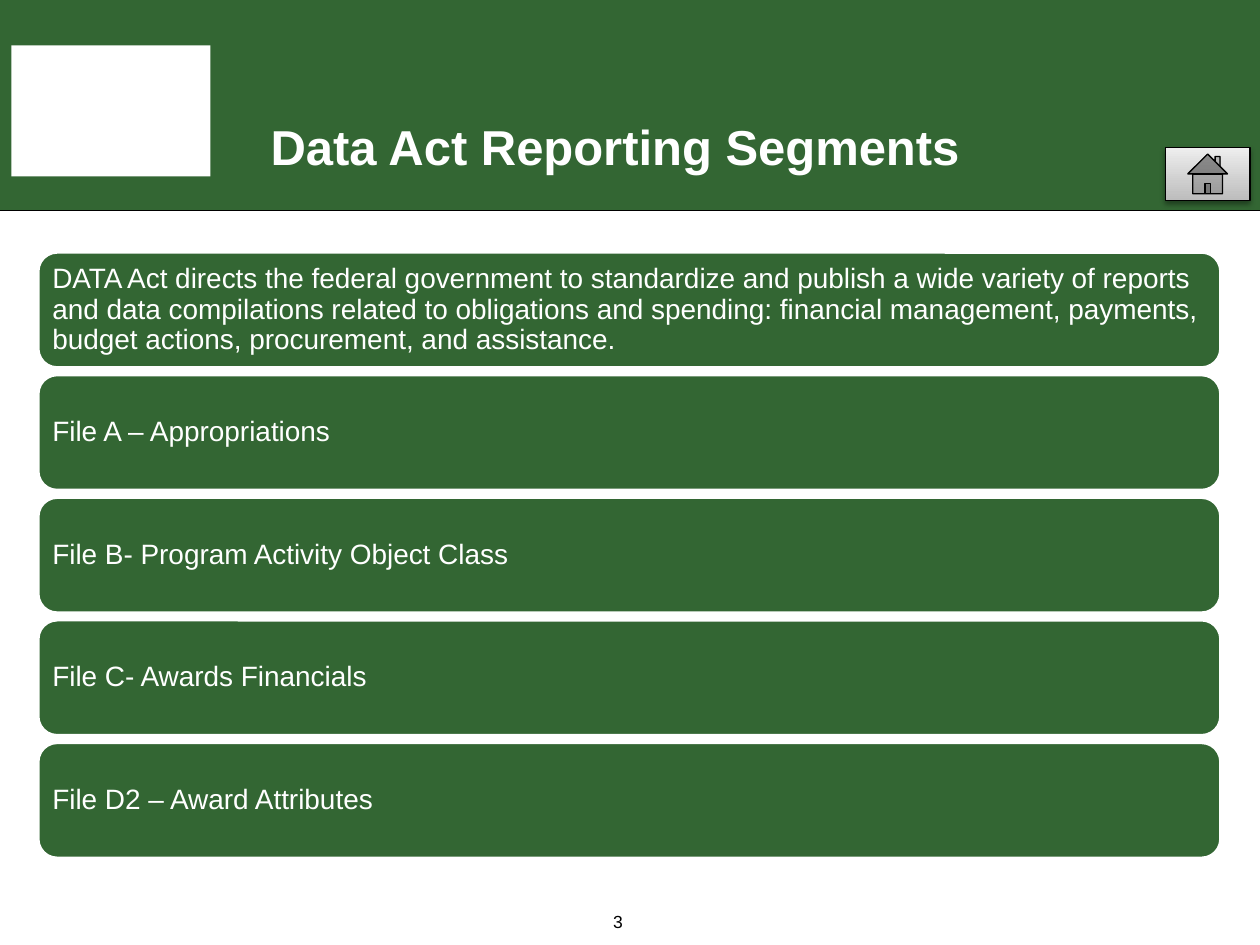
import pptx
import pptx.util
import pptx.dml.color
import pptx.enum.shapes
import pptx.enum.text
import pptx.oxml
import pptx.oxml.ns

Inches = pptx.util.Inches
Pt = pptx.util.Pt
RGBColor = pptx.dml.color.RGBColor
MSO_SHAPE = pptx.enum.shapes.MSO_SHAPE
PP_ALIGN = pptx.enum.text.PP_ALIGN
MSO_ANCHOR = pptx.enum.text.MSO_ANCHOR

GREEN = RGBColor(0x33, 0x66, 0x33)
WHITE = RGBColor(0xFF, 0xFF, 0xFF)
BLACK = RGBColor(0x00, 0x00, 0x00)
BUTTON_DARK = RGBColor(0xBD, 0xBD, 0xBD)
BUTTON_LIGHT = RGBColor(0xEE, 0xEE, 0xEE)

SEGMENTS = [
    "DATA Act directs the federal government to standardize and publish a wide "
    "variety of reports and data compilations related to obligations and spending: "
    "financial management, payments, budget actions, procurement, and assistance.",
    "File A – Appropriations",
    "File B- Program Activity Object Class",
    "File C- Awards Financials",
    "File D2 – Award Attributes",
]


def write_text(shape, text, size, color=WHITE, bold=False, align=PP_ALIGN.LEFT,
               anchor=MSO_ANCHOR.MIDDLE, insets=(0.1, 0.05), line_spacing=1.0):
    frame = shape.text_frame
    frame.word_wrap = True
    frame.auto_size = pptx.enum.text.MSO_AUTO_SIZE.NONE
    frame.vertical_anchor = anchor
    frame.margin_left = frame.margin_right = Inches(insets[0])
    frame.margin_top = frame.margin_bottom = Inches(insets[1])
    frame.text = text
    paragraph = frame.paragraphs[0]
    paragraph.alignment = align
    paragraph.line_spacing = line_spacing
    font = paragraph.runs[0].font
    font.name = "Arial"
    font.size = Pt(size)
    font.bold = bold
    font.color.rgb = color


def add_filled_shape(kind, left, top, width, height, fill, line=None, line_width=0.75):
    shape = slide.shapes.add_shape(
        kind, Inches(left), Inches(top), Inches(width), Inches(height))
    shape.shadow.inherit = False
    shape.fill.solid()
    shape.fill.fore_color.rgb = fill
    if line is None:
        shape.line.fill.background()
    else:
        shape.line.color.rgb = line
        shape.line.width = Pt(line_width)
    return shape


presentation = pptx.Presentation()
presentation.slide_width = Inches(10)
presentation.slide_height = Inches(7.5)
slide = presentation.slides.add_slide(presentation.slide_layouts[5])

# Header band with its rule and white panel
add_filled_shape(MSO_SHAPE.RECTANGLE, 0, 0, 10, 1.67, GREEN)
rule = slide.shapes.add_connector(
    pptx.enum.shapes.MSO_CONNECTOR.STRAIGHT,
    Inches(0), Inches(1.67), Inches(10), Inches(1.67))
rule.line.color.rgb = BLACK
rule.line.width = Pt(0.75)
rule.element.spPr.append(pptx.oxml.parse_xml(
    f"<a:effectLst {pptx.oxml.ns.nsdecls('a')}/>"))
add_filled_shape(MSO_SHAPE.RECTANGLE, 0.09, 0.36, 1.58, 1.04, WHITE)

# Home button: light at the top, dark at the bottom, with a soft shadow
home = add_filled_shape(
    MSO_SHAPE.ACTION_BUTTON_HOME, 9.25, 1.17, 0.67, 0.42, BUTTON_DARK, BLACK)
home.fill.gradient()
home.fill.gradient_angle = 90
for stop, color in zip(home.fill.gradient_stops, (BUTTON_DARK, BUTTON_LIGHT)):
    stop.color.rgb = color
effects = home.element.spPr.find(pptx.oxml.ns.qn("a:effectLst"))
effects.append(pptx.oxml.parse_xml(
    f"<a:outerShdw {pptx.oxml.ns.nsdecls('a')} blurRad='{Pt(3.1)}' dist='{Pt(1.6)}' "
    "dir='5400000' rotWithShape='0'>"
    "<a:srgbClr val='000000'><a:alpha val='38000'/></a:srgbClr></a:outerShdw>"))

# Title, brought in front of the header band
title = slide.shapes.title
title.left, title.top = Inches(1.76), Inches(0.23)
title.width, title.height = Inches(6.35), Inches(1.21)
write_text(title, "Data Act Reporting Segments ", 28, bold=True,
           align=PP_ALIGN.CENTER, anchor=MSO_ANCHOR.BOTTOM)
title.element.getparent().append(title.element)

# Stack of reporting segments
for index, segment in enumerate(SEGMENTS):
    bar = add_filled_shape(MSO_SHAPE.ROUNDED_RECTANGLE, 0.3, 2 + index * 0.973,
                           9.39, 0.92, GREEN, WHITE, 2)
    write_text(bar, segment, 16, insets=(0.07, 0.07), line_spacing=0.9)

page_number = slide.shapes.add_textbox(
    Inches(3.98), Inches(7.28), Inches(1.85), Inches(0.17))
write_text(page_number, "3", 10, color=BLACK, align=PP_ALIGN.CENTER,
           anchor=MSO_ANCHOR.BOTTOM)

presentation.save("out.pptx")
